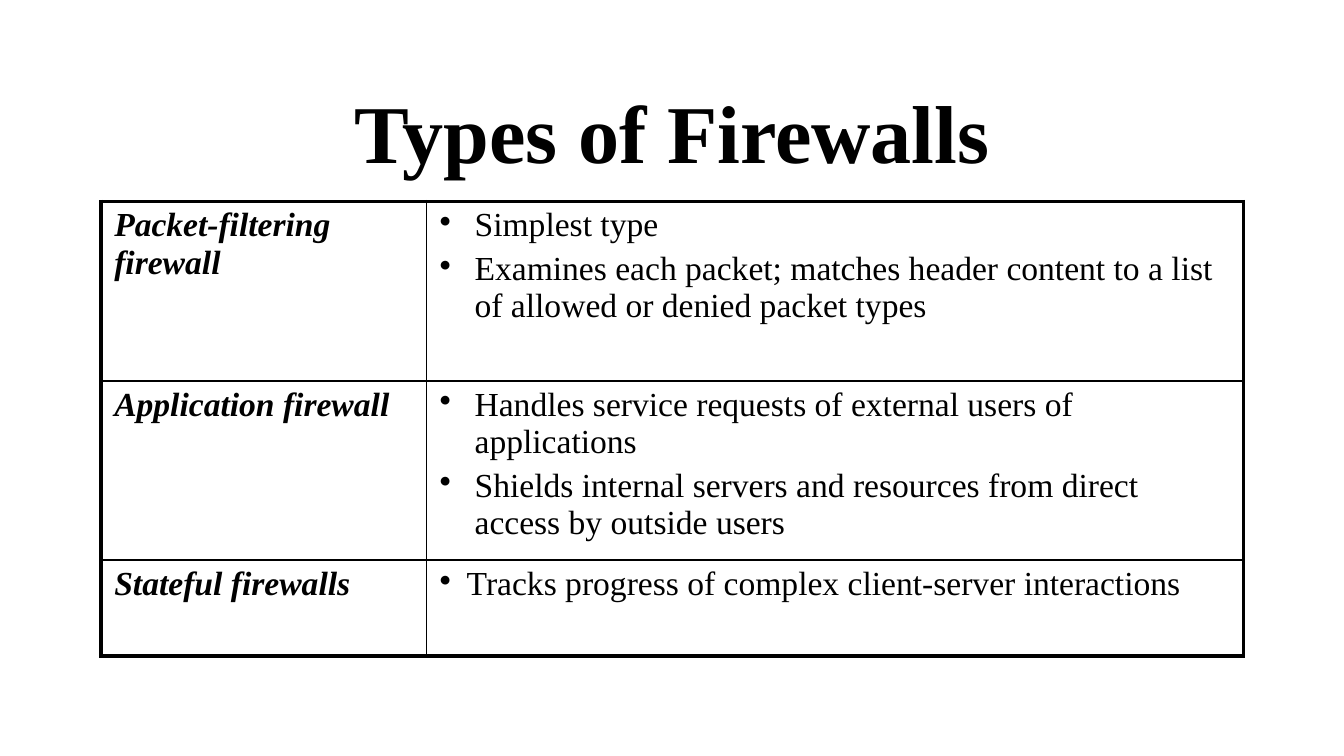
import pptx
import pptx.dml.color
import pptx.enum.text
import pptx.oxml
import pptx.oxml.ns
import pptx.util
from dataclasses import dataclass

Cm = pptx.util.Cm
Pt = pptx.util.Pt

# Content: firewall type, its points, hanging indent of the points (cm)
TITLE = "Types of Firewalls"
FIREWALLS = [
    ("Packet-filtering firewall",
     ["Simplest type",
      "Examines each packet; matches header content to a list of allowed or denied packet types"],
     0.66),
    ("Application firewall",
     ["Handles service requests of external users of applications",
      "Shields internal servers and resources from direct access by outside users"],
     0.66),
    ("Stateful firewalls",
     ["Tracks progress of complex client-server interactions"],
     0.51),
]

# Layout in cm
LEFT, TITLE_TOP, TITLE_HEIGHT, TABLE_TOP = 1.91, 1.27, 2.39, 3.81
COLUMN_WIDTHS = [6.15, 15.44]
ROW_HEIGHTS = [3.39, 3.39, 1.81]


@dataclass(frozen=True)
class Theme:
    font: str = "Times New Roman"
    ink: str = "000000"
    title_size: float = 44
    body_size: float = 18
    paragraph_gap: float = 3.6
    outer_line: float = 2.25
    inner_line: float = 1


THEME = Theme()


def style_paragraph(para, size, bold=False, italic=False):
    for span in para.runs:
        span.font.name = THEME.font
        span.font.size = Pt(size)
        span.font.bold = bold
        span.font.italic = italic
        span.font.color.rgb = pptx.dml.color.RGBColor.from_string(THEME.ink)


def add_bullet(para, indent):
    properties = para._p.get_or_add_pPr()
    properties.set("marL", str(Cm(indent)))
    properties.set("indent", str(-Cm(indent)))
    bullet = pptx.oxml.parse_xml(f'<a:buChar {pptx.oxml.ns.nsdecls("a")} char="•"/>')
    properties.append(bullet)


def draw_borders(cell, outer_sides):
    """Give the cell a thick line on outer sides and a thin one elsewhere."""
    properties = cell._tc.get_or_add_tcPr()
    for side in "LRTB":
        width = THEME.outer_line if side in outer_sides else THEME.inner_line
        properties.append(pptx.oxml.parse_xml(
            f'<a:ln{side} {pptx.oxml.ns.nsdecls("a")} w="{Pt(width)}">'
            f'<a:solidFill><a:srgbClr val="{THEME.ink}"/></a:solidFill></a:ln{side}>'))


def fill_cell(cell, lines, indent=None):
    cell.margin_left = cell.margin_right = Cm(0.25)
    cell.margin_top = cell.margin_bottom = Cm(0.1)
    cell.vertical_anchor = pptx.enum.text.MSO_ANCHOR.TOP
    cell.text_frame.text = "\n".join(lines)
    is_label = indent is None
    for number, para in enumerate(cell.text_frame.paragraphs):
        if number:
            para.space_before = Pt(THEME.paragraph_gap)
        if not is_label:
            add_bullet(para, indent)
        style_paragraph(para, THEME.body_size, bold=is_label, italic=is_label)


def add_title(page):
    box = page.shapes.add_textbox(Cm(LEFT), Cm(TITLE_TOP),
                                  Cm(sum(COLUMN_WIDTHS)), Cm(TITLE_HEIGHT))
    frame = box.text_frame
    frame.word_wrap = True
    frame.vertical_anchor = pptx.enum.text.MSO_ANCHOR.MIDDLE
    frame.text = TITLE
    para = frame.paragraphs[0]
    para.alignment = pptx.enum.text.PP_ALIGN.CENTER
    style_paragraph(para, THEME.title_size, bold=True)


def add_firewall_table(page):
    table = page.shapes.add_table(
        len(FIREWALLS), len(COLUMN_WIDTHS), Cm(LEFT), Cm(TABLE_TOP),
        Cm(sum(COLUMN_WIDTHS)), Cm(sum(ROW_HEIGHTS))).table
    table.first_row = table.horz_banding = False
    for column, width in zip(table.columns, COLUMN_WIDTHS):
        column.width = Cm(width)
    for row, height in zip(table.rows, ROW_HEIGHTS):
        row.height = Cm(height)

    last = len(FIREWALLS) - 1
    for index, (name, points, indent) in enumerate(FIREWALLS):
        label, details = table.rows[index].cells
        fill_cell(label, [name])
        fill_cell(details, points, indent)
        edges = ("T" if index == 0 else "") + ("B" if index == last else "")
        for cell, side in ((label, "L"), (details, "R")):
            draw_borders(cell, side + edges)
            cell.fill.background()


def main():
    deck = pptx.Presentation()
    deck.slide_width, deck.slide_height = Cm(25.4), Cm(14.29)
    page = deck.slides.add_slide(deck.slide_layouts[6])
    add_title(page)
    add_firewall_table(page)
    deck.save("out.pptx")


if __name__ == "__main__":
    main()
